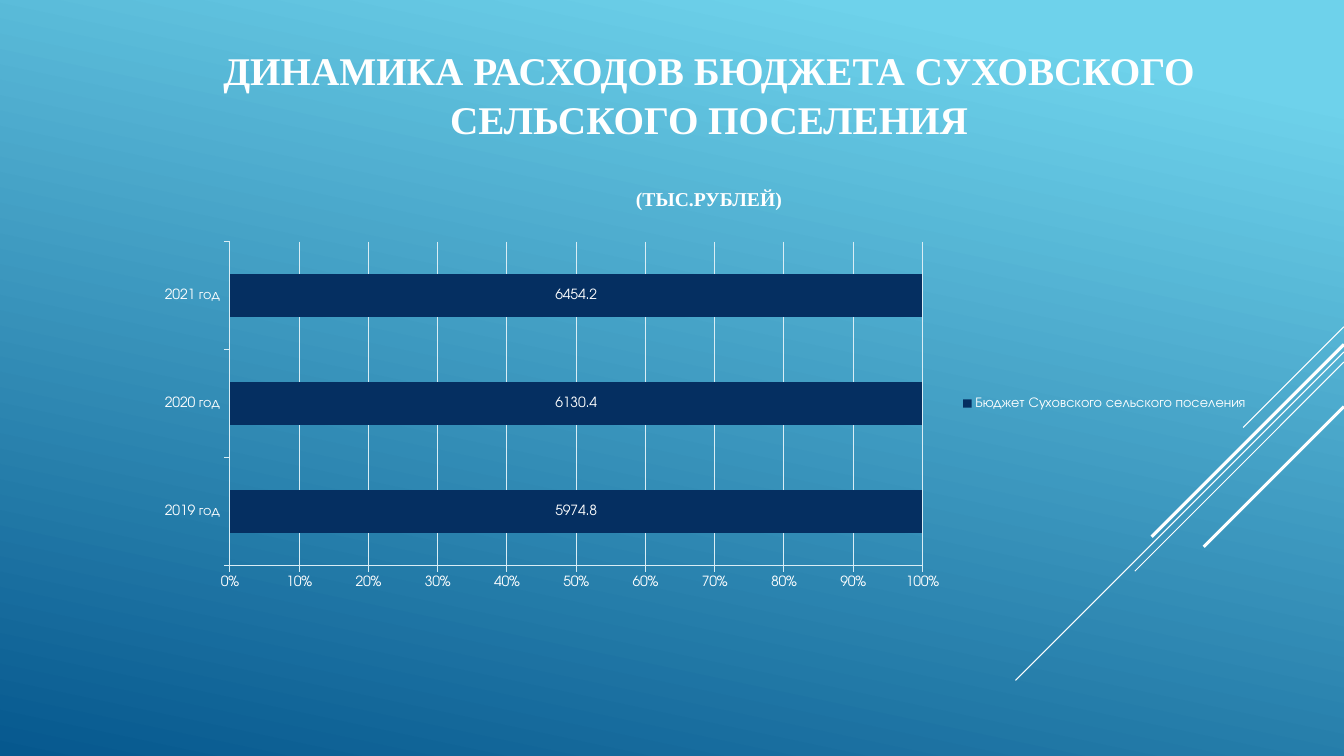
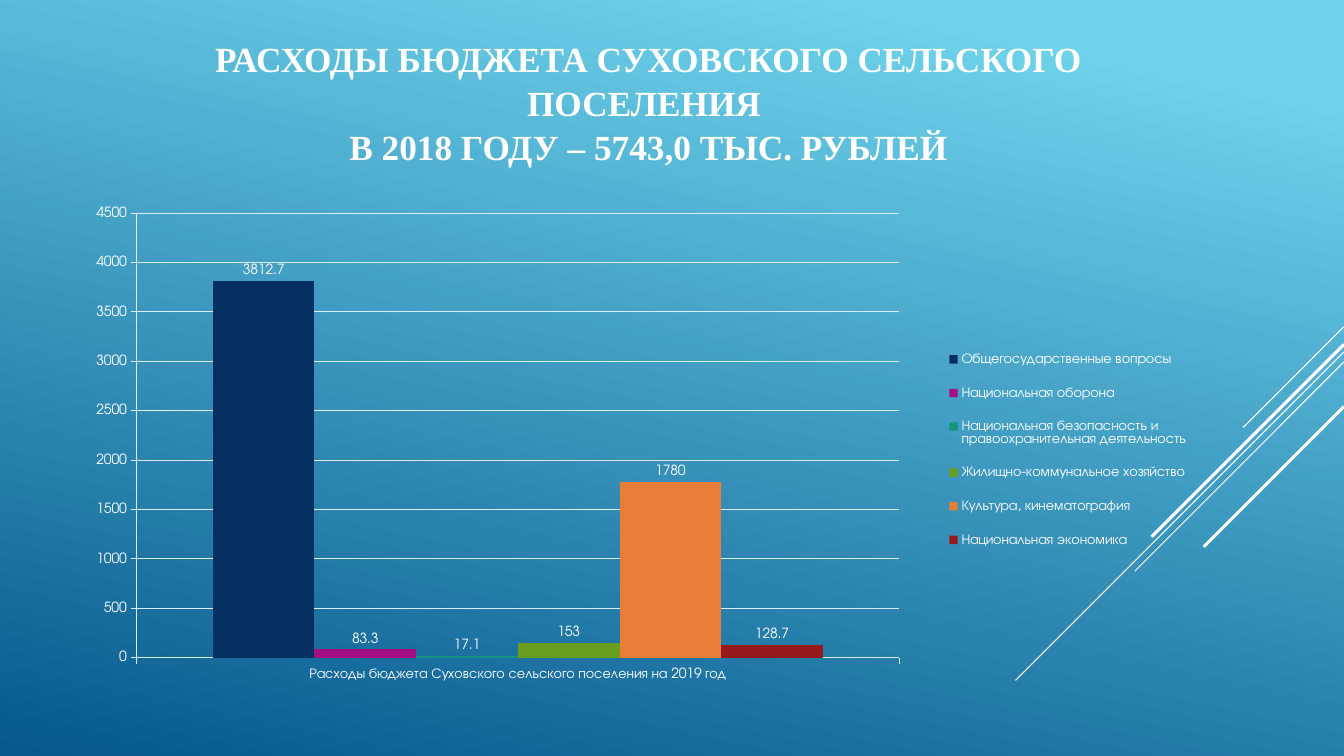
from pptx import Presentation
from pptx.chart.data import CategoryChartData
from pptx.dml.color import RGBColor
from pptx.enum.chart import XL_CHART_TYPE as ChartType, XL_LABEL_POSITION as LabelPosition
from pptx.enum.chart import XL_LEGEND_POSITION as LegendPosition
from pptx.enum.shapes import MSO_CONNECTOR as Connector
from pptx.enum.text import MSO_ANCHOR as Anchor, PP_ALIGN as Align
from pptx.oxml import parse_xml
from pptx.oxml.ns import nsdecls, qn
from pptx.oxml.xmlchemy import OxmlElement
from pptx.util import Inches, Pt

COLUMNS, ROWS = 160, 90
COLORS = {
    "sky": "6ED2EB", "deep": "06588E", "text": "FFFFFF", "grid": "D9EDF5",
    "navy": "052F61", "plum": "A50E82", "teal": "14967C",
    "green": "6A9E1F", "orange": "E87D37", "red": "951A1B",
}
STREAKS = [(38.9, 12, 0.75), (41.9, 39.1, 0.75), (43.1, 24.9, 0.75), (41, 22.9, 2.25), (48.4, 16.7, 2.25)]


def color(name):
    """Return the named colour."""
    return RGBColor.from_string(COLORS[name])


def cells(*counts):
    """Turn grid cells into lengths."""
    return [Inches(count / 12) for count in counts]


def manual_layout(box, target=""):
    """Build a chart layout from shares of the chart's size."""
    x, y, width, height = box
    inner = f'<c:layoutTarget val="{target}"/>' if target else ""
    return parse_xml(
        f'<c:layout {nsdecls("c")}><c:manualLayout>{inner}'
        '<c:xMode val="edge"/><c:yMode val="edge"/>'
        f'<c:x val="{x}"/><c:y val="{y}"/><c:w val="{width}"/><c:h val="{height}"/>'
        '</c:manualLayout></c:layout>')


class BudgetDeck:
    """Holds the shared style and the current slide."""

    title_font = "Times New Roman"
    chart_font = "TeX Gyre Adventor"

    def __init__(self):
        """Start an empty deck."""
        self.deck = Presentation()
        self.deck.slide_width, self.deck.slide_height = cells(COLUMNS, ROWS)
        self.page = None

    def add_page(self):
        """Add a slide with the gradient and the diagonal streaks."""
        self.page = self.deck.slides.add_slide(self.deck.slide_layouts[6])
        fill = self.page.background.fill
        fill.gradient()
        fill.gradient_angle = 360 - 102
        for stop, name, position in zip(fill.gradient_stops, ("sky", "deep"), (0.1, 1)):
            stop.color.rgb = color(name)
            stop.position = position
        for row, run, weight in STREAKS:
            ends = cells(COLUMNS, row, COLUMNS - run, row + run)
            streak = self.page.shapes.add_connector(Connector.STRAIGHT, *ends)
            streak.line.color.rgb = color("text")
            streak.line.width = Pt(weight)
            streak.element.spPr.append(OxmlElement("a:effectLst"))

    def add_title(self, box, lines):
        """Add a centred title from (text, size, space before) lines."""
        frame = self.page.shapes.add_textbox(*cells(*box)).text_frame
        frame.word_wrap = True
        frame.vertical_anchor = Anchor.TOP
        frame.margin_top = frame.margin_bottom = 0
        for index, (text, size, gap) in enumerate(lines):
            para = frame.add_paragraph() if index else frame.paragraphs[0]
            para.text = text
            para.alignment = Align.CENTER
            para.line_spacing = 1.04
            para.space_before = Pt(gap)
            font = para.font
            font.name, font.size, font.bold = self.title_font, Pt(size), True
            font.color.rgb = color("text")

    def add_chart(self, kind, box, categories, series, plot_box, legend_box, axis_format, label_position):
        """Add a bar chart from (name, values, colour) series."""
        data = CategoryChartData()
        data.categories = categories
        for name, values, _ in series:
            data.add_series(name, values)
        chart = self.page.shapes.add_chart(kind, *cells(*box), data).chart
        chart.has_title = False
        chart.font.name, chart.font.size = self.chart_font, Pt(10)
        chart.font.color.rgb = color("text")
        plot = chart.plots[0]
        plot.gap_width = 150
        plot.vary_by_categories = False
        for item, (_, _, name) in zip(plot.series, series):
            item.format.fill.solid()
            item.format.fill.fore_color.rgb = color(name)
            item.invert_if_negative = False
        plot.has_data_labels = True
        plot.data_labels.show_value = True
        plot.data_labels.position = label_position
        self.style_axes(chart, axis_format)
        self.place_parts(chart, plot_box, legend_box)

    def style_axes(self, chart, axis_format):
        """Colour the axes and the gridlines."""
        values = chart.value_axis
        values.has_major_gridlines = True
        values.tick_labels.number_format = axis_format
        values.tick_labels.number_format_is_linked = False
        for part in (values, chart.category_axis, values.major_gridlines):
            part.format.line.color.rgb = color("grid")
            part.format.line.width = Pt(0.75)

    def place_parts(self, chart, plot_box, legend_box):
        """Place the plot area and the legend."""
        chart.has_legend = True
        chart.legend.position = LegendPosition.RIGHT
        chart.legend.include_in_layout = False
        area = chart.element.find(".//" + qn("c:plotArea"))
        for old in area.findall(qn("c:layout")):
            area.remove(old)
        area.insert(0, manual_layout(plot_box, "inner"))
        legend = chart.element.find(".//" + qn("c:legend"))
        for old in legend.findall(qn("c:layout")):
            legend.remove(old)
        legend.find(qn("c:overlay")).addprevious(manual_layout(legend_box))


def main():
    """Build both slides and save the deck."""
    budget = BudgetDeck()

    budget.add_page()
    budget.add_title((14.4, 5.3, 140, 19.2), [
        ("ДИНАМИКА РАСХОДОВ БЮДЖЕТА СУХОВСКОГО СЕЛЬСКОГО ПОСЕЛЕНИЯ", 28, 0),
        ("(ТЫС.РУБЛЕЙ)", 14, 31),
    ])
    budget.add_chart(
        ChartType.BAR_STACKED_100, (9, 21, 142.4, 51.5),
        ["2019 год", "2020 год", "2021 год"],
        [("Бюджет Суховского сельского поселения", (5974.8, 6130.4, 6454.2), "navy")],
        plot_box=(0.129, 0.151, 0.579, 0.749), legend_box=(0.73, 0.49, 0.26, 0.07),
        axis_format="0%", label_position=LabelPosition.CENTER)

    budget.add_page()
    budget.add_title((21.2, 4.2, 112, 15.1), [
        ("РАСХОДЫ БЮДЖЕТА СУХОВСКОГО СЕЛЬСКОГО ПОСЕЛЕНИЯ \vВ 2018 ГОДУ – 5743,0 ТЫС. РУБЛЕЙ", 25.2, 0),
    ])
    budget.add_chart(
        ChartType.COLUMN_CLUSTERED, (9, 23.8, 142.3, 58.3),
        ["Расходы бюджета Суховского сельского поселения на 2019 год"],
        [
            ("Общегосударственные вопросы", (3812.7,), "navy"),
            ("Национальная оборона", (83.3,), "plum"),
            ("Национальная безопасность и правоохранительная деятельность", (17.1,), "teal"),
            ("Жилищно-коммунальное хозяйство", (153,), "green"),
            ("Культура, кинематография", (1780,), "orange"),
            ("Национальная экономика", (128.7,), "red"),
        ],
        plot_box=(0.051, 0.027, 0.638, 0.908), legend_box=(0.725, 0.27, 0.21, 0.48),
        axis_format="General", label_position=LabelPosition.OUTSIDE_END)

    budget.deck.save("out.pptx")


if __name__ == "__main__":
    main()
